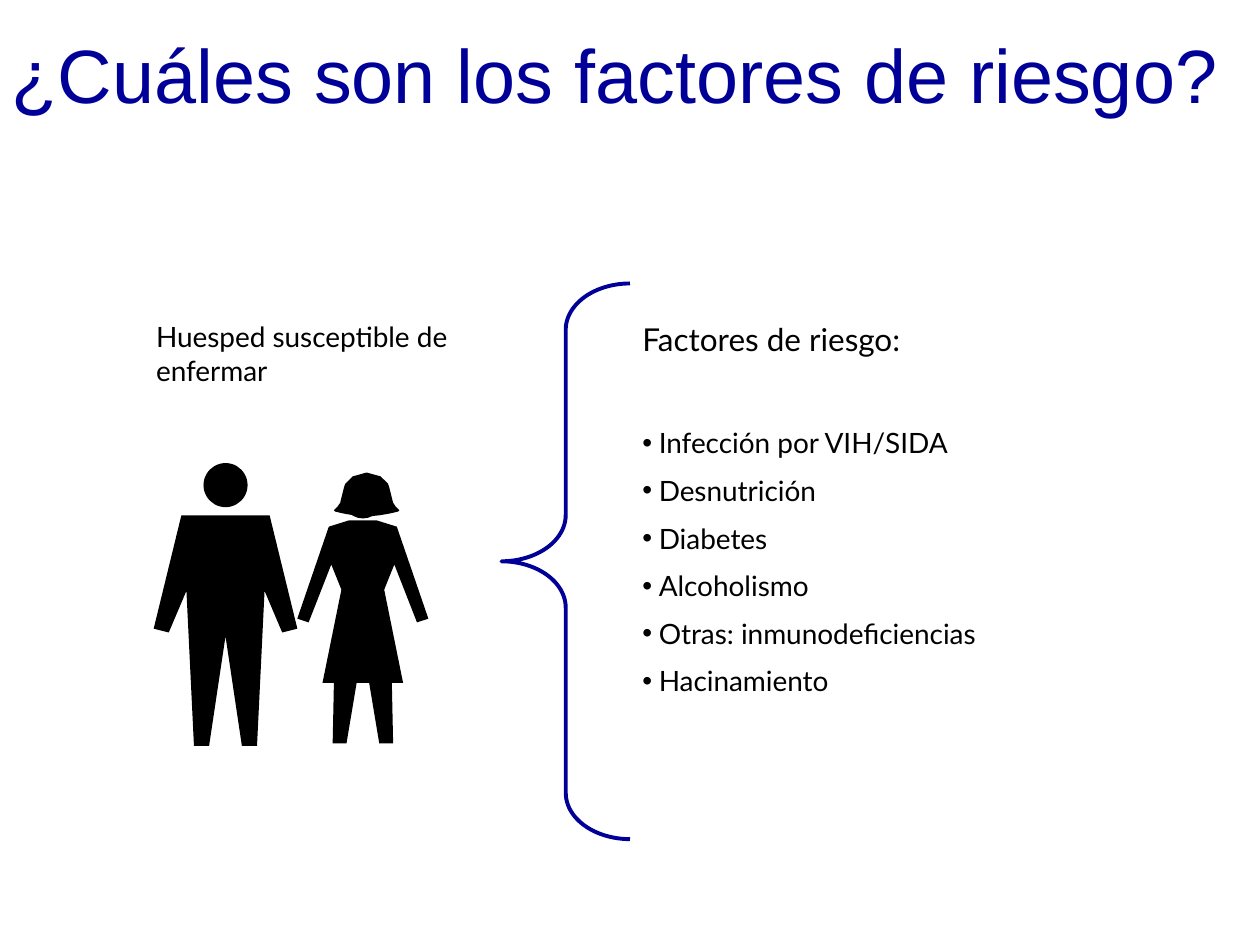
"""Build a slide on the risk factors of a susceptible host."""
from pptx import Presentation
from pptx.dml.color import RGBColor
from pptx.enum.shapes import MSO_SHAPE
from pptx.enum.text import MSO_ANCHOR, PP_ALIGN
from pptx.oxml.ns import qn
from pptx.util import Inches, Pt

OVAL, BRACE = MSO_SHAPE.OVAL, MSO_SHAPE.LEFT_BRACE
TOP, MIDDLE = MSO_ANCHOR.TOP, MSO_ANCHOR.MIDDLE
LEFT, CENTER = PP_ALIGN.LEFT, PP_ALIGN.CENTER
BLUE, BLACK = "000099", "000000"

TITLE = "¿Cuáles son los factores de riesgo?"
HOST = "Huesped susceptible de enfermar"
HEAD = "Factores de riesgo:"
RISKS = ["Infección por VIH/SIDA", "Desnutrición", "Diabetes", "Alcoholismo",
         "Otras: inmunodeficiencias", "Hacinamiento"]

HALVES = [
    (2.91, [(0, 3.75), (0.07, 3.77), (0.11, 3.78), (0.14, 3.81), (0.17, 3.84),
            (0.18, 3.87), (0.19, 3.91), (0.2, 3.95), (0.21, 3.99), (0.23, 4.02),
            (0.25, 4.04), (0.26, 4.05), (0.25, 4.06), (0.21, 4.07),
            (0.16, 4.08), (0.1, 4.09), (0, 4.1)]),
    (2.88, [(0, 4.13), (0.11, 4.13), (0.27, 4.18), (0.52, 4.91), (0.43, 4.94),
            (0.25, 4.48), (0.17, 4.68), (0.32, 5.42), (0, 5.42)]),
    (1.79, [(0, 4.09), (0.35, 4.09), (0.57, 4.99), (0.45, 5.02), (0.31, 4.69),
            (0.25, 5.92), (0.13, 5.92), (0, 5.05)]),
]
LEG = [(0.05, 5.42), (0.13, 5.9), (0.24, 5.9), (0.23, 5.42)]
HEADS = [(2.88, 3.96, 0.31), (1.79, 3.85, 0.35)]


def tint(text):
    return RGBColor.from_string(text)


def paint(shape):
    shape.shadow.inherit = False
    shape.fill.solid()
    shape.fill.fore_color.rgb = tint(BLACK)
    shape.line.fill.background()


def trace(shapes, axis, half):
    pts = [(Inches(axis + x), Inches(y)) for x, y in half]
    pen = shapes.build_freeform(*pts[0], scale=1.0)
    pen.add_line_segments(pts[1:], close=True)
    paint(pen.convert_to_shape())


def flip(half):
    return [(-x, y) for x, y in half]


def write(shapes, area, lines, font, color, anchor=TOP, align=LEFT):
    box = shapes.add_textbox(*map(Inches, area))
    frame = box.text_frame
    frame.word_wrap = True
    frame.vertical_anchor = anchor
    for i, (text, size, gap) in enumerate(lines):
        para = frame.add_paragraph() if i else frame.paragraphs[0]
        para.text = text
        para.alignment = align
        para.space_before = Pt(gap)
        para.font.size = Pt(size)
        para.font.name = font
        para.font.color.rgb = tint(color)
    return frame


def mark(para):
    props = para._p.get_or_add_pPr()
    props.set("marL", str(Inches(0.13)))
    props.set("indent", str(Inches(-0.13)))
    font = props.makeelement(qn("a:buFont"), {"typeface": "Arial"})
    dot = props.makeelement(qn("a:buChar"), {"char": "•"})
    rest = props.find(qn("a:defRPr"))
    for item in (font, dot):
        if rest is None:
            props.append(item)
        else:
            rest.addprevious(item)


def main():
    deck = Presentation()
    deck.slide_width, deck.slide_height = Inches(10), Inches(7.5)
    shapes = deck.slides.add_slide(deck.slide_layouts[6]).shapes

    title = write(shapes, (0, 0, 10, 1.25), [(TITLE, 43.2, 0)],
                  "Arial", BLUE, MIDDLE, CENTER)
    title.margin_left, title.margin_right = Inches(0), Inches(0.24)
    title.paragraphs[0].line_spacing = 0.9

    write(shapes, (1.14, 2.49, 2.58, 0.64), [(HOST, 16, 0)], "Lato", BLACK)
    lines = [(HEAD, 18, 0)]
    lines += [(risk, 16, 8 if i else 39) for i, risk in enumerate(RISKS)]
    risks = write(shapes, (5, 2.49, 2.92, 3.66), lines, "Lato", BLACK)
    for para in risks.paragraphs[1:]:
        mark(para)

    pair = shapes.add_group_shape().shapes
    for axis, half in HALVES:
        trace(pair, axis, half + flip(half[::-1]))
    for leg in (LEG, flip(LEG)):
        trace(pair, 2.88, leg)
    for x, y, size in HEADS:
        area = x - size / 2, y - size / 2, size, size
        paint(pair.add_shape(OVAL, *map(Inches, area)))

    brace = shapes.add_shape(BRACE, *map(Inches, (3.98, 2.25, 1.02, 4.41)))
    brace.shadow.inherit = False
    brace.adjustments[0] = 0.36
    brace.fill.background()
    brace.line.color.rgb = tint(BLUE)
    brace.line.width = Pt(2.25)

    deck.save("out.pptx")


if __name__ == "__main__":
    main()
